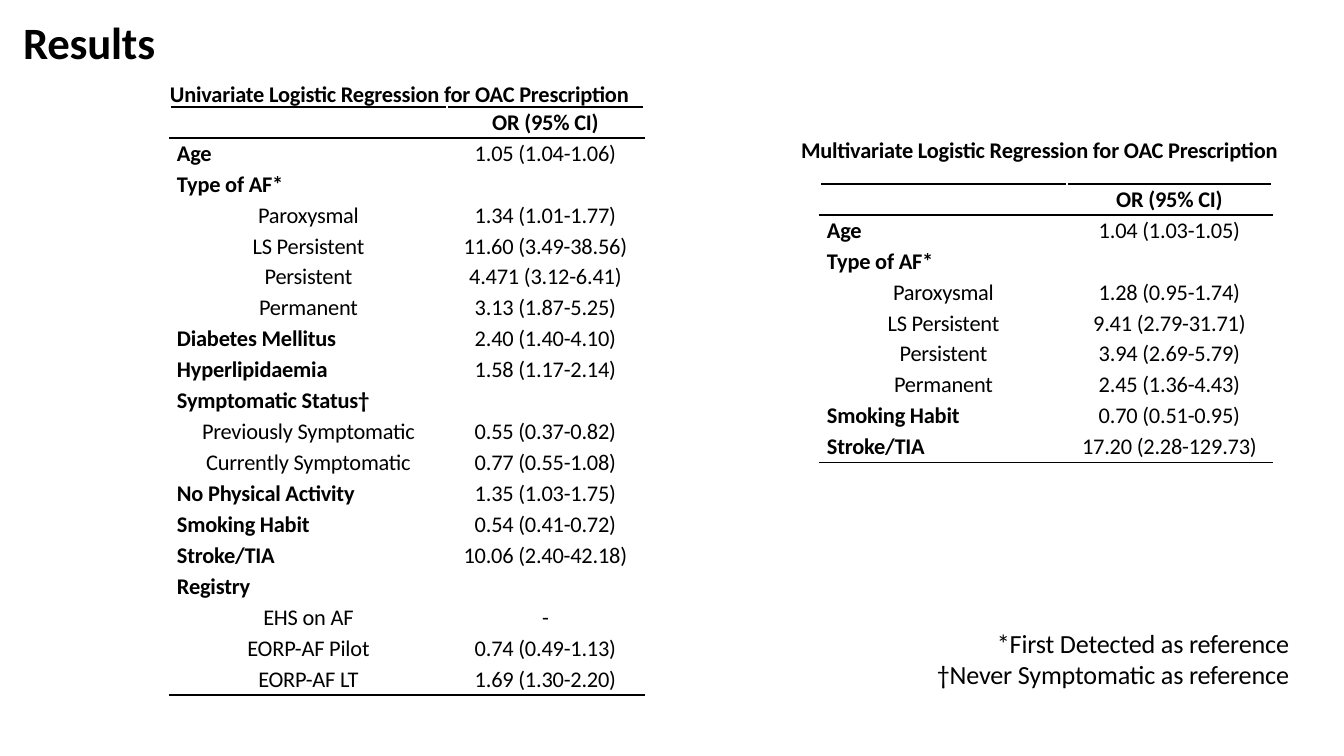
from dataclasses import dataclass

from lxml.etree import SubElement
from pptx import Presentation
from pptx.dml.color import RGBColor
from pptx.enum.text import MSO_ANCHOR, PP_ALIGN
from pptx.oxml import parse_xml
from pptx.oxml.ns import nsdecls, qn
from pptx.util import Emu, Pt

BLACK = RGBColor(0x00, 0x00, 0x00)
WHITE = RGBColor(0xFF, 0xFF, 0xFF)
FONT = "Calibri"
TABLE_SIZE = 12
ROW_HEIGHT = 31
LABEL_INDENT = 7
EMU_PER_PX = 914400 / 134.4


def px(length: int) -> Emu:
    return Emu(round(length * EMU_PER_PX))


@dataclass
class Row:
    label: str
    ratio: str = ""
    is_level: bool = False


@dataclass
class ResultTable:
    left: int
    top: int
    label_width: int
    ratio_width: int
    rows: list[Row]


@dataclass
class TextBox:
    left: int
    top: int
    width: int
    height: int
    lines: list[str]
    size: int = TABLE_SIZE
    bold: bool = True
    align: PP_ALIGN = PP_ALIGN.LEFT


def level(label: str, ratio: str) -> Row:
    return Row(label, ratio, is_level=True)


# Content
UNIVARIATE = ResultTable(170, 107, 277, 197, [
    Row("Age", "1.05 (1.04-1.06)"),
    Row("Type of AF*"),
    level("Paroxysmal", "1.34 (1.01-1.77)"),
    level("LS Persistent", "11.60 (3.49-38.56)"),
    level("Persistent", "4.471 (3.12-6.41)"),
    level("Permanent", "3.13 (1.87-5.25)"),
    Row("Diabetes Mellitus", "2.40 (1.40-4.10)"),
    Row("Hyperlipidaemia", "1.58 (1.17-2.14)"),
    Row("Symptomatic Status†"),
    level("Previously Symptomatic", "0.55 (0.37-0.82)"),
    level("Currently Symptomatic", "0.77 (0.55-1.08)"),
    Row("No Physical Activity", "1.35 (1.03-1.75)"),
    Row("Smoking Habit", "0.54 (0.41-0.72)"),
    Row("Stroke/TIA", "10.06 (2.40-42.18)"),
    Row("Registry"),
    level("EHS on AF", "-"),
    level("EORP-AF Pilot", "0.74 (0.49-1.13)"),
    level("EORP-AF LT", "1.69 (1.30-2.20)"),
])
MULTIVARIATE = ResultTable(820, 184, 247, 205, [
    Row("Age", "1.04 (1.03-1.05)"),
    Row("Type of AF*"),
    level("Paroxysmal", "1.28 (0.95-1.74)"),
    level("LS Persistent", "9.41 (2.79-31.71)"),
    level("Persistent", "3.94 (2.69-5.79)"),
    level("Permanent", "2.45 (1.36-4.43)"),
    Row("Smoking Habit", "0.70 (0.51-0.95)"),
    Row("Stroke/TIA", "17.20 (2.28-129.73)"),
])
TEXT_BOXES = [
    TextBox(22, 12, 137, 58, ["Results"], size=24),
    TextBox(169, 77, 476, 31,
            ["Univariate Logistic Regression for OAC Prescription"]),
    TextBox(800, 133, 495, 31,
            ["Multivariate Logistic Regression for OAC Prescription"]),
    TextBox(925, 624, 364, 66,
            ["*First Detected as reference", "†Never Symptomatic as reference"],
            size=14, bold=False, align=PP_ALIGN.RIGHT),
]


def write(para, text: str, *, size: int = TABLE_SIZE, bold: bool = False,
          align: PP_ALIGN = PP_ALIGN.LEFT) -> None:
    para.alignment = align
    if not text:
        # An empty cell needs its own size to keep the row height
        SubElement(para._p, qn("a:endParaRPr"), sz=str(size * 100))
        return
    span = para.add_run()
    span.text = text
    span.font.name = FONT
    span.font.size = Pt(size)
    span.font.bold = bold
    span.font.color.rgb = BLACK
    span._r.get_or_add_rPr().set("spc", "-10")


def add_text_box(slide, spec: TextBox) -> None:
    box = slide.shapes.add_textbox(
        px(spec.left), px(spec.top), px(spec.width), px(spec.height))
    frame = box.text_frame
    frame.word_wrap = True
    frame.margin_left = px(1)
    frame.margin_top = px(3)
    frame.margin_right = frame.margin_bottom = 0
    for index, line in enumerate(spec.lines):
        para = frame.add_paragraph() if index else frame.paragraphs[0]
        write(para, line, size=spec.size, bold=spec.bold, align=spec.align)


def set_borders(cell, *, top: RGBColor, bottom: RGBColor) -> None:
    sides = {"lnL": WHITE, "lnR": WHITE, "lnT": top, "lnB": bottom}
    properties = cell._tc.get_or_add_tcPr()
    for index, (side, color) in enumerate(sides.items()):
        properties.insert(index, parse_xml(
            f'<a:{side} {nsdecls("a")} w="{Pt(1)}"><a:solidFill>'
            f'<a:srgbClr val="{color}"/></a:solidFill></a:{side}>'))


def add_result_table(slide, spec: ResultTable) -> None:
    rows = [Row("", "OR (95% CI)"), *spec.rows]
    last = len(rows) - 1
    table = slide.shapes.add_table(
        len(rows), 2, px(spec.left), px(spec.top),
        px(spec.label_width + spec.ratio_width),
        px(ROW_HEIGHT * len(rows))).table
    table.first_row = table.horz_banding = False
    table.columns[0].width = px(spec.label_width)
    table.columns[1].width = px(spec.ratio_width)

    for index, row in enumerate(rows):
        table.rows[index].height = px(ROW_HEIGHT)
        for column, text in enumerate((row.label, row.ratio)):
            cell = table.cell(index, column)
            is_heading = column == 0 and not row.is_level
            cell.fill.background()
            cell.vertical_anchor = MSO_ANCHOR.TOP
            cell.margin_left = px(LABEL_INDENT) if is_heading else 0
            cell.margin_top = px(2)
            cell.margin_right = cell.margin_bottom = 0
            write(cell.text_frame.paragraphs[0], text,
                  bold=is_heading or index == 0,
                  align=PP_ALIGN.LEFT if is_heading else PP_ALIGN.CENTER)
            # Rules frame the header and close the table
            set_borders(cell, top=BLACK if index <= 1 else WHITE,
                        bottom=BLACK if index in (0, last) else WHITE)


def main() -> None:
    deck = Presentation()
    deck.slide_width, deck.slide_height = px(1344), px(756)
    slide = deck.slides.add_slide(deck.slide_layouts[6])

    # Regression results
    for result_table in (UNIVARIATE, MULTIVARIATE):
        add_result_table(slide, result_table)

    # Title, captions and footnotes
    for text_box in TEXT_BOXES:
        add_text_box(slide, text_box)

    deck.save("out.pptx")


if __name__ == "__main__":
    main()
